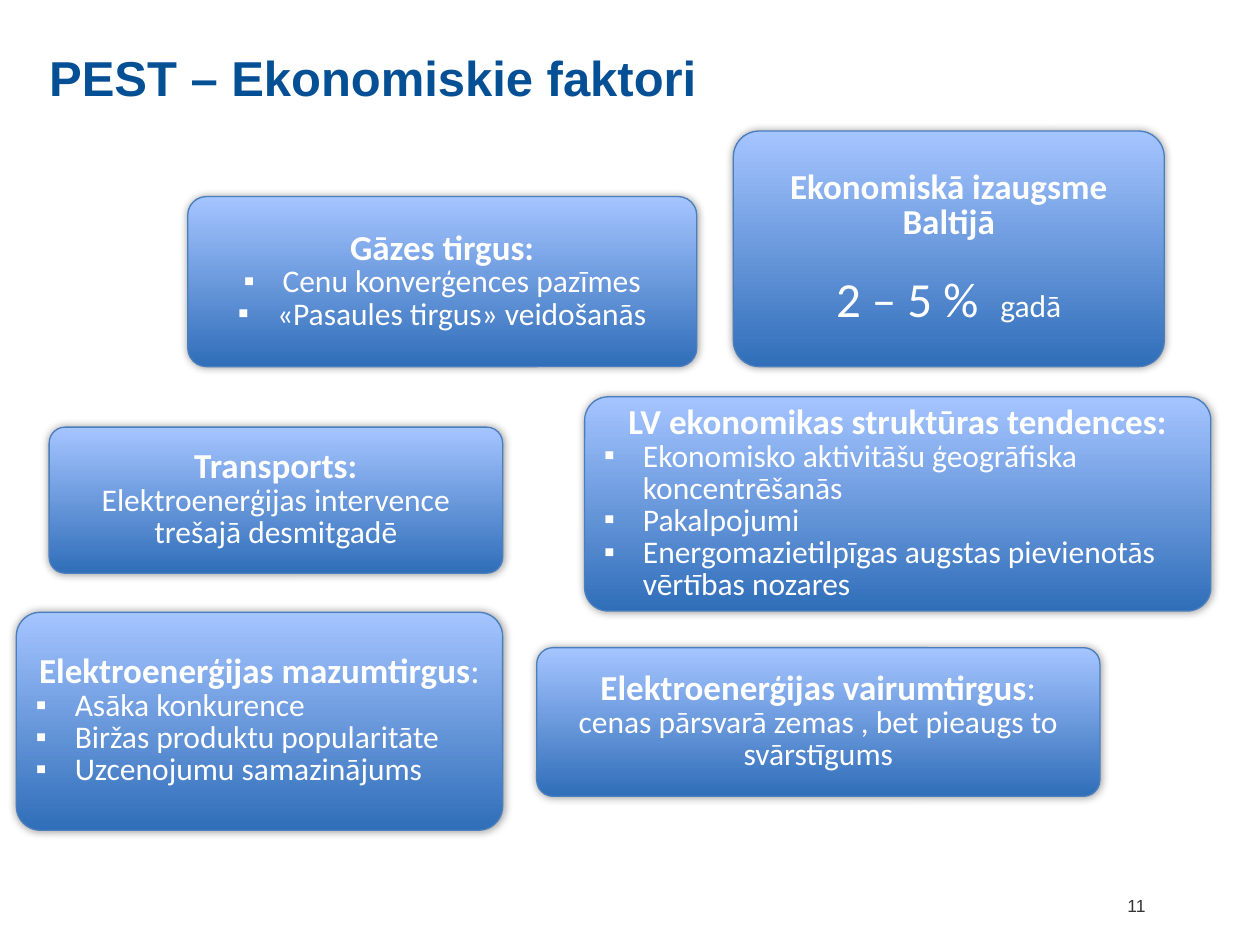
import pptx
import pptx.util
import pptx.dml.color
import pptx.enum.shapes
import pptx.enum.text
import pptx.oxml
import pptx.oxml.ns

Pt = pptx.util.Pt
ALIGN = pptx.enum.text.PP_ALIGN
ANCHOR = pptx.enum.text.MSO_ANCHOR
COLS, ROWS = 100, 75
NS = pptx.oxml.ns.nsdecls("a")
GLOW = (f'<a:effectLst {NS}><a:outerShdw blurRad="63500" dist="0" dir="0">'
        '<a:srgbClr val="000000"><a:alpha val="40000"/></a:srgbClr>'
        '</a:outerShdw></a:effectLst>')

CARDS = [
    ((14.9, 15.6, 40.4, 13.5), "Gāzes tirgus:", "",
     ["Cenu konverģences pazīmes", "«Pasaules tirgus» veidošanās"], True, ALIGN.CENTER),
    ((3.9, 33.9, 36, 11.6), "Transports:", "",
     ["Elektroenerģijas intervence trešajā desmitgadē"], False, ALIGN.CENTER),
    ((46.4, 31.5, 49.7, 17), "LV ekonomikas struktūras tendences:", "",
     ["Ekonomisko aktivitāšu ģeogrāfiska koncentrēšanās", "Pakalpojumi",
      "Energomazietilpīgas augstas pievienotās vērtības nozares"], True, ALIGN.LEFT),
    ((1.3, 48.6, 38.6, 17.3), "Elektroenerģijas mazumtirgus", ":",
     ["Asāka konkurence", "Biržas produktu popularitāte",
      "Uzcenojumu samazinājums"], True, ALIGN.LEFT),
    ((42.6, 51.4, 44.7, 11.8), "Elektroenerģijas vairumtirgus", ":",
     ["cenas pārsvarā zemas , bet pieaugs to svārstīgums"], False, ALIGN.CENTER),
]


def color(code):
    """Turn a hex string into a colour."""
    return pptx.dml.color.RGBColor.from_string(code)


def place(deck, box):
    """Turn grid columns and rows into slide lengths."""
    wide, high = deck.slide_width / COLS, deck.slide_height / ROWS
    return [round(n * unit) for n, unit in zip(box, (wide, high) * 2)]


def style(run, size, bold=False, code="FFFFFF", face="Calibri"):
    """Format one run of text."""
    font = run.font
    font.name, font.size, font.bold = face, Pt(size), bold
    font.color.rgb = color(code)


def clear(frame):
    """Remove the inner margins of a text frame."""
    frame.margin_left = frame.margin_right = 0
    frame.margin_top = frame.margin_bottom = 0
    frame.word_wrap = True


def bullet(para):
    """Give a paragraph a hanging square bullet."""
    props = para._p.get_or_add_pPr()
    indent = pptx.util.Inches(0.31)
    props.set("marL", str(indent))
    props.set("indent", str(-indent))
    props.append(pptx.oxml.parse_xml(f'<a:buFont {NS} typeface="Arial"/>'))
    props.append(pptx.oxml.parse_xml(f'<a:buChar {NS} char="▪"/>'))


def panel(deck, slide, box, lines):
    """Draw a glowing gradient panel and return its centred paragraphs."""
    kind = pptx.enum.shapes.MSO_SHAPE.ROUNDED_RECTANGLE
    shape = slide.shapes.add_shape(kind, *place(deck, box))
    shape.adjustments[0] = 0.11
    shape.fill.gradient()
    shape.fill.gradient_angle = 90
    for stop, code, spot in zip(shape.fill.gradient_stops, ("306EB9", "A4C4FF"), (0, 0.99)):
        stop.color.rgb = color(code)
        stop.position = spot
    shape.line.color.rgb = color("4B7EBC")
    shape.line.width = Pt(0.75)
    shape._element.spPr.append(pptx.oxml.parse_xml(GLOW))
    frame = shape.text_frame
    frame.word_wrap = True
    frame.vertical_anchor = ANCHOR.MIDDLE
    frame.text = "\n".join(lines)
    for para in frame.paragraphs:
        para.alignment = ALIGN.CENTER
        para.line_spacing = 0.85
    return frame.paragraphs


def card(deck, slide, box, head, tail, lines, marked, align):
    """Place a panel with a bold heading over plain or bulleted lines."""
    first, *rest = panel(deck, slide, box, [head, *lines])
    style(first.runs[0], 20, True)
    if tail:
        run = first.add_run()
        run.text = tail
        style(run, 20)
    for para in rest:
        para.alignment = align
        if marked:
            bullet(para)
        style(para.runs[0], 18)


def growth(deck, slide, box):
    """Place the growth panel with its large rate."""
    head, rate = panel(deck, slide, box, ["Ekonomiskā izaugsme Baltijā", "2 – 5 %  "])
    style(head.runs[0], 20, True)
    rate.space_before = Pt(20)
    style(rate.runs[0], 28)
    run = rate.add_run()
    run.text = "gadā"
    style(run, 18)


def title(deck, slide, box):
    """Place the slide title."""
    shape = slide.shapes.title
    shape.left, shape.top, shape.width, shape.height = place(deck, box)
    frame = shape.text_frame
    clear(frame)
    frame.vertical_anchor = ANCHOR.TOP
    frame.text = "PEST – Ekonomiskie faktori"
    para = frame.paragraphs[0]
    para.alignment = ALIGN.LEFT
    style(para.runs[0], 28, True, "054F95", "Arial")


def number(deck, slide, box):
    """Place the page number."""
    frame = slide.shapes.add_textbox(*place(deck, box)).text_frame
    clear(frame)
    frame.vertical_anchor = ANCHOR.MIDDLE
    frame.text = "11"
    para = frame.paragraphs[0]
    para.alignment = ALIGN.CENTER
    style(para.runs[0], 10, False, "333333", "Arial")


def main():
    """Build the slide and save it."""
    deck = pptx.Presentation()
    deck.slide_width = pptx.util.Inches(10)
    deck.slide_height = pptx.util.Inches(7.5)
    slide = deck.slides.add_slide(deck.slide_layouts[5])
    title(deck, slide, (3.9, 3.8, 92.2, 11.8))
    number(deck, slide, (84.3, 70.9, 11.8, 2))
    growth(deck, slide, (58.2, 10.4, 34.2, 18.7))
    for item in CARDS:
        card(deck, slide, *item)
    deck.save("out.pptx")


if __name__ == "__main__":
    main()
